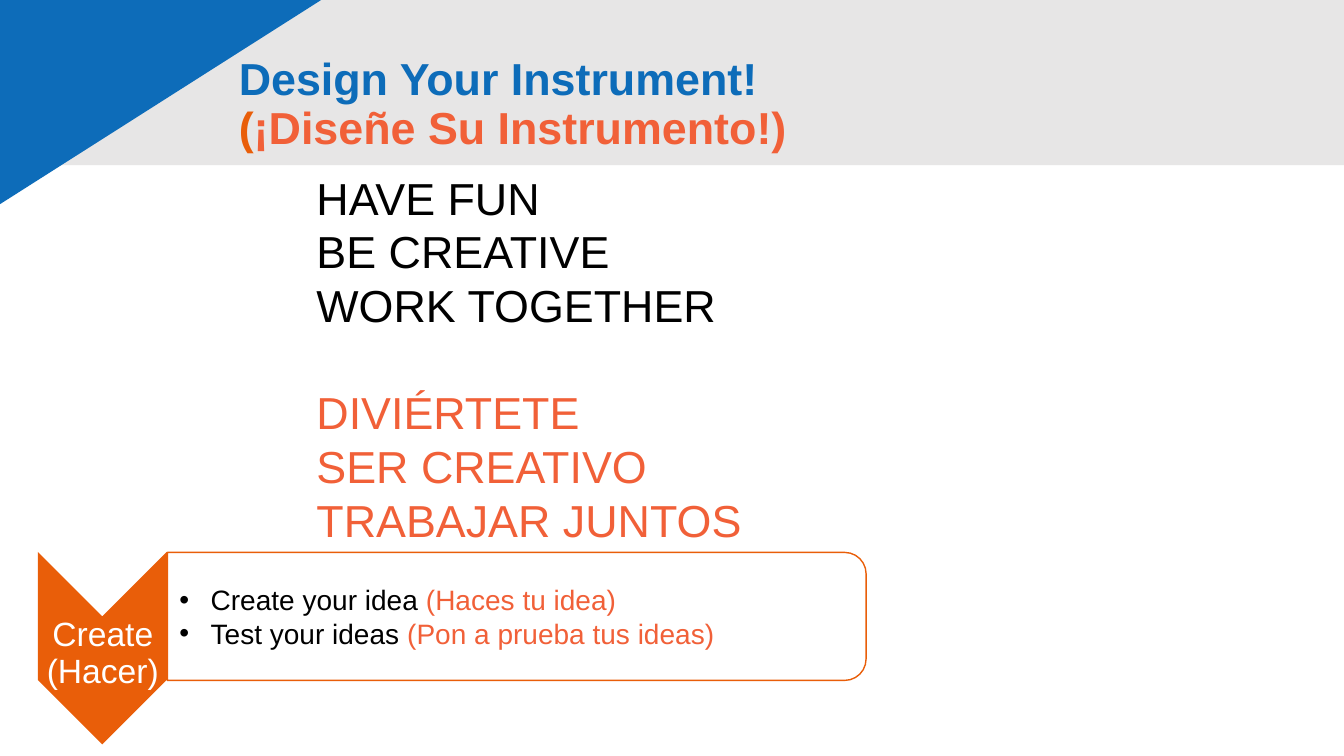
from dataclasses import dataclass

from lxml import etree
from pptx import Presentation
from pptx.dml.color import RGBColor
from pptx.enum.shapes import MSO_SHAPE
from pptx.enum.text import MSO_ANCHOR, PP_ALIGN
from pptx.oxml.ns import qn
from pptx.util import Inches, Pt

RECTANGLE = MSO_SHAPE.RECTANGLE
TRIANGLE = MSO_SHAPE.RIGHT_TRIANGLE
ROUNDED_SIDE = MSO_SHAPE.ROUND_2_SAME_RECTANGLE
CHEVRON = MSO_SHAPE.CHEVRON
TOP, MIDDLE, BOTTOM = MSO_ANCHOR.TOP, MSO_ANCHOR.MIDDLE, MSO_ANCHOR.BOTTOM
LEFT, CENTER = PP_ALIGN.LEFT, PP_ALIGN.CENTER

SLIDE_WIDTH = Inches(13.33)
SLIDE_HEIGHT = Inches(7.5)


@dataclass(frozen=True)
class Theme:
    font: str = "Arial"
    blue: str = "0D6CB9"
    grey: str = "E7E6E6"
    orange: str = "E95E09"
    spanish: str = "F16038"
    black: str = "000000"
    white: str = "FFFFFF"
    heading: int = 32
    step: int = 24
    body: int = 20


THEME = Theme()


def place(left, top, width, height):
    """Turn percentages of the slide into lengths."""
    return [int(share * side / 100) for share, side in
            zip((left, top, width, height), (SLIDE_WIDTH, SLIDE_HEIGHT) * 2)]


def add_block(slide, kind, box, fill, line=None, quarter_turn=False):
    """Add a filled shape; box is the area it covers once turned."""
    left, top, width, height = place(*box)
    if quarter_turn:
        left, top = left + (width - height) // 2, top + (height - width) // 2
        width, height = height, width
    shape = slide.shapes.add_shape(kind, left, top, width, height)
    shape.rotation = 90 if quarter_turn else 0
    shape.shadow.inherit = False
    shape.fill.solid()
    shape.fill.fore_color.rgb = RGBColor.from_string(fill)
    if line:
        shape.line.color.rgb = RGBColor.from_string(line)
        shape.line.width = Pt(1)
    else:
        shape.line.fill.background()
    return shape


def add_bullet(paragraph, indent):
    properties = paragraph._p.get_or_add_pPr()
    properties.set("marL", str(indent))
    properties.set("indent", str(-indent))
    etree.SubElement(properties, qn("a:buFont")).set("typeface", THEME.font)
    etree.SubElement(properties, qn("a:buChar")).set("char", "•")


def add_text(slide, box, paragraphs, size, bold=False, anchor=TOP, align=LEFT,
             spacing=None, insets=(0.1, 0.05, 0.1, 0.05), bullet_indent=None,
             gaps=None):
    """Write paragraphs, each a list of (text, colour) runs."""
    frame = slide.shapes.add_textbox(*place(*box)).text_frame
    frame.word_wrap = True
    frame.vertical_anchor = anchor
    (frame.margin_left, frame.margin_top,
     frame.margin_right, frame.margin_bottom) = map(Inches, insets)
    for index, runs in enumerate(paragraphs):
        paragraph = frame.add_paragraph() if index else frame.paragraphs[0]
        paragraph.alignment = align
        if spacing:
            paragraph.line_spacing = spacing
        if gaps and index in gaps:
            paragraph.space_before = Pt(gaps[index])
        if bullet_indent:
            add_bullet(paragraph, Inches(bullet_indent))
        for text, color in runs:
            if text == "\n":
                paragraph.add_line_break()
                continue
            run = paragraph.add_run()
            run.text = text
            run.font.name = THEME.font
            run.font.size = Pt(size)
            run.font.bold = bold
            run.font.color.rgb = RGBColor.from_string(color)


def add_header(slide):
    add_block(slide, RECTANGLE, (-1.95, -2.53, 101.95, 24.4), THEME.grey)
    corner = add_block(slide, TRIANGLE, (-19.28, -22.93, 63.47, 71.73), THEME.blue)
    corner.rotation = 180
    corner._element.spPr.find(qn("a:xfrm")).set("flipH", "1")
    add_text(slide, (17.03, 4.27, 72.77, 19.33),
             [[("Design Your Instrument! ", THEME.blue), ("\n", None),
               ("(", THEME.orange), ("¡Diseñe Su Instrumento!)", THEME.spanish)]],
             THEME.heading, bold=True, anchor=MIDDLE, spacing=0.9)


def add_create_step(slide):
    panel = add_block(slide, ROUNDED_SIDE, (12.45, 73.07, 51.99, 16.93),
                      THEME.white, line=THEME.orange, quarter_turn=True)
    color = panel._element.spPr.find(qn("a:solidFill"))[0]
    etree.SubElement(color, qn("a:alpha")).set("val", "90000")
    ideas = [("Create your idea ", "(Haces tu idea)"),
             ("Test your ideas ", "(Pon a prueba tus ideas)")]
    add_text(slide, (12.45, 73.87, 51.54, 15.33),
             [[(english, THEME.black), (spanish, THEME.spanish)]
              for english, spanish in ideas],
             THEME.body, anchor=MIDDLE, insets=(0.12, 0.01, 0.01, 0.01),
             bullet_indent=0.31)
    add_block(slide, CHEVRON, (2.81, 73, 9.6, 25.47), THEME.orange,
              quarter_turn=True)
    add_text(slide, (2.85, 85.47, 9.6, 7.6), [[("Create (Hacer)", THEME.white)]],
             THEME.step, anchor=BOTTOM, align=CENTER, spacing=0.9,
             insets=(0.02, 0.02, 0.02, 0.13))


def add_encouragement(slide):
    english = ["HAVE FUN", "BE CREATIVE", "WORK TOGETHER"]
    spanish = ["DIVIÉRTETE", "SER CREATIVO", "TRABAJAR JUNTOS"]
    lines = [[(text, color)] for texts, color in
             ((english, THEME.black), (spanish, THEME.spanish)) for text in texts]
    add_text(slide, (22.81, 21.87, 58.29, 58.8), lines, THEME.heading,
             gaps={len(english): 38})


def main():
    presentation = Presentation()
    presentation.slide_width = SLIDE_WIDTH
    presentation.slide_height = SLIDE_HEIGHT
    slide = presentation.slides.add_slide(presentation.slide_layouts[6])
    # Header band, corner and title
    add_header(slide)
    # Step marker with its bullet panel
    add_create_step(slide)
    # Encouragement in both languages
    add_encouragement(slide)
    presentation.save("out.pptx")


if __name__ == "__main__":
    main()
